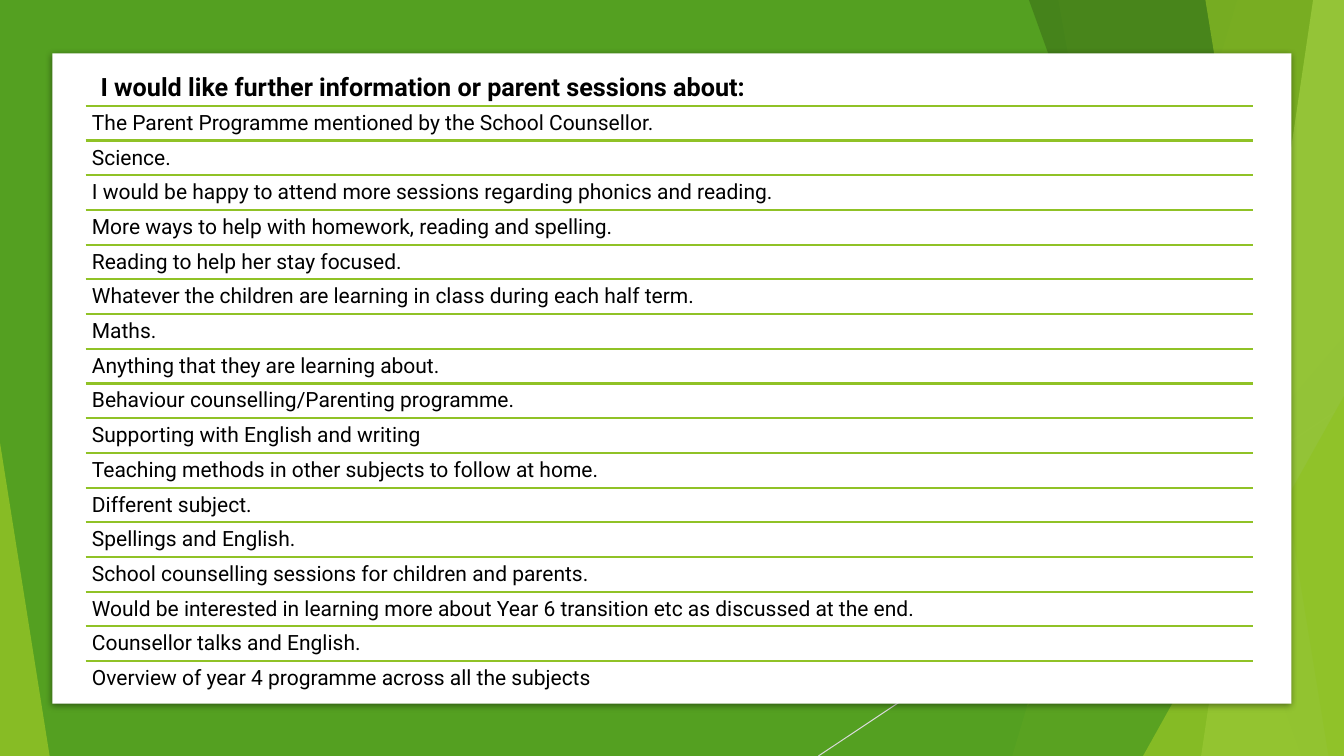
from pptx import Presentation
from pptx.dml.color import RGBColor
from pptx.enum.shapes import MSO_CONNECTOR, MSO_SHAPE
from pptx.oxml.ns import qn
from pptx.util import Pt
from lxml.etree import SubElement

WIDTH, HEIGHT = 960, 540
GREEN, LIME = "54A021", "90C226"

REQUESTS = [
    "The Parent Programme mentioned by the School Counsellor.",
    "Science.",
    "I would be happy to attend more sessions regarding phonics and reading.",
    "More ways to help with homework, reading and spelling.",
    "Reading to help her stay focused.",
    "Whatever the children are learning in class during each half term.",
    "Maths.",
    "Anything that they are learning about.",
    "Behaviour counselling/Parenting programme.",
    "Supporting with English and writing",
    "Teaching methods in other subjects to follow at home.",
    "Different subject.",
    "Spellings and English.",
    "School counselling sessions for children and parents.",
    "Would be interested in learning more about Year 6 transition etc as discussed at the end.",
    "Counsellor talks and English.",
    "Overview of year 4 programme across all the subjects",
]


def colour(hex_value):
    return RGBColor.from_string(hex_value)


def paint(shape, hex_value, opacity=100):
    """Flat fill without outline or shadow; opacity in percent."""
    shape.fill.solid()
    shape.fill.fore_color.rgb = colour(hex_value)
    shape.line.fill.background()
    shape.shadow.inherit = False
    if opacity < 100:
        rgb = shape._element.spPr.find(qn("a:solidFill"))[0]
        SubElement(rgb, qn("a:alpha"), val=str(opacity * 1000))


def add_box(slide, preset, left, top, width, height, hex_value, opacity=100):
    box = slide.shapes.add_shape(preset, Pt(left), Pt(top), Pt(width), Pt(height))
    paint(box, hex_value, opacity)
    return box


def add_rule(slide, x1, y1, x2, y2, hex_value, weight):
    rule = slide.shapes.add_connector(MSO_CONNECTOR.STRAIGHT, Pt(x1), Pt(y1), Pt(x2), Pt(y2))
    rule.line.color.rgb = colour(hex_value)
    rule.line.width = Pt(weight)
    SubElement(rule._element.spPr, qn("a:effectLst"))


def add_band(slide, top_x, bottom_x, hex_value, opacity):
    """Full-height facet from a slanted left edge to the right slide edge."""
    outline = slide.shapes.build_freeform(Pt(top_x), Pt(0))
    outline.add_line_segments(
        [(Pt(WIDTH), Pt(0)), (Pt(WIDTH), Pt(HEIGHT)), (Pt(bottom_x), Pt(HEIGHT))])
    paint(outline.convert_to_shape(), hex_value, opacity)


def add_wedge(slide, left, top, width, apex, hex_value, opacity):
    """Triangle standing on the bottom slide edge; apex 0 is left, 1 is right."""
    wedge = add_box(slide, MSO_SHAPE.ISOSCELES_TRIANGLE,
                    left, top, width, HEIGHT - top, hex_value, opacity)
    wedge.adjustments[0] = apex


def add_backdrop(slide):
    add_box(slide, MSO_SHAPE.RECTANGLE, 0, 0, WIDTH, HEIGHT, GREEN)
    add_rule(slide, WIDTH, 290, 584.6, HEIGHT, "D9D9D9", 0.75)
    add_band(slide, 884, 723, LIME, 30)
    add_band(slide, 756, 852, LIME, 20)
    add_wedge(slide, 703.5, 240, 256.5, 1, GREEN, 72)
    add_band(slide, 735, 929.5, "3F7819", 70)
    add_band(slide, 938, 858, "C0E474", 70)
    add_band(slide, 861, 949, LIME, 65)
    add_wedge(slide, 816.5, 283, 143.5, 1, LIME, 80)
    add_wedge(slide, 0, 316, 35.5, 0, LIME, 85)


def add_card(slide, left, top, width, height):
    card = add_box(slide, MSO_SHAPE.RECTANGLE, left, top, width, height, "FFFFFF")
    effects = card._element.spPr.find(qn("a:effectLst"))
    shadow = SubElement(effects, qn("a:outerShdw"), blurRad=str(Pt(5)),
                        dist=str(Pt(1.4)), dir="5400000", rotWithShape="0")
    rgb = SubElement(shadow, qn("a:srgbClr"), val="000000")
    SubElement(rgb, qn("a:alpha"), val="43000")


def add_text(slide, text, left, top, width, height, size, bold=False):
    box = slide.shapes.add_textbox(Pt(left), Pt(top), Pt(width), Pt(height))
    frame = box.text_frame
    frame.word_wrap = True
    paragraph = frame.paragraphs[0]
    paragraph.text = text
    font = paragraph.font
    font.name, font.size, font.bold = "Roboto", Pt(size), bold
    font.color.rgb = colour("000000")
    return frame


def add_request_list(slide, left, top, width, row_height):
    for index, request in enumerate(REQUESTS):
        row_top = top + index * row_height
        add_rule(slide, left, row_top, left + width, row_top, LIME, 1.5)
        frame = add_text(slide, request, left, row_top, width, row_height, 15)
        frame.margin_left = frame.margin_right = Pt(4.5)
        frame.margin_top = frame.margin_bottom = Pt(4.5)
        frame.paragraphs[0].line_spacing = 0.9


def main():
    presentation = Presentation()
    presentation.slide_width, presentation.slide_height = Pt(WIDTH), Pt(HEIGHT)
    slide = presentation.slides.add_slide(presentation.slide_layouts[6])
    add_backdrop(slide)
    add_card(slide, 37.4, 38.1, 885, 464.5)
    add_text(slide, "I would like further information or parent sessions about:",
             64.8, 47.5, 512, 29, 18, bold=True)
    add_request_list(slide, 61.2, 75.6, 834, 24.79)
    presentation.save("out.pptx")


if __name__ == "__main__":
    main()
